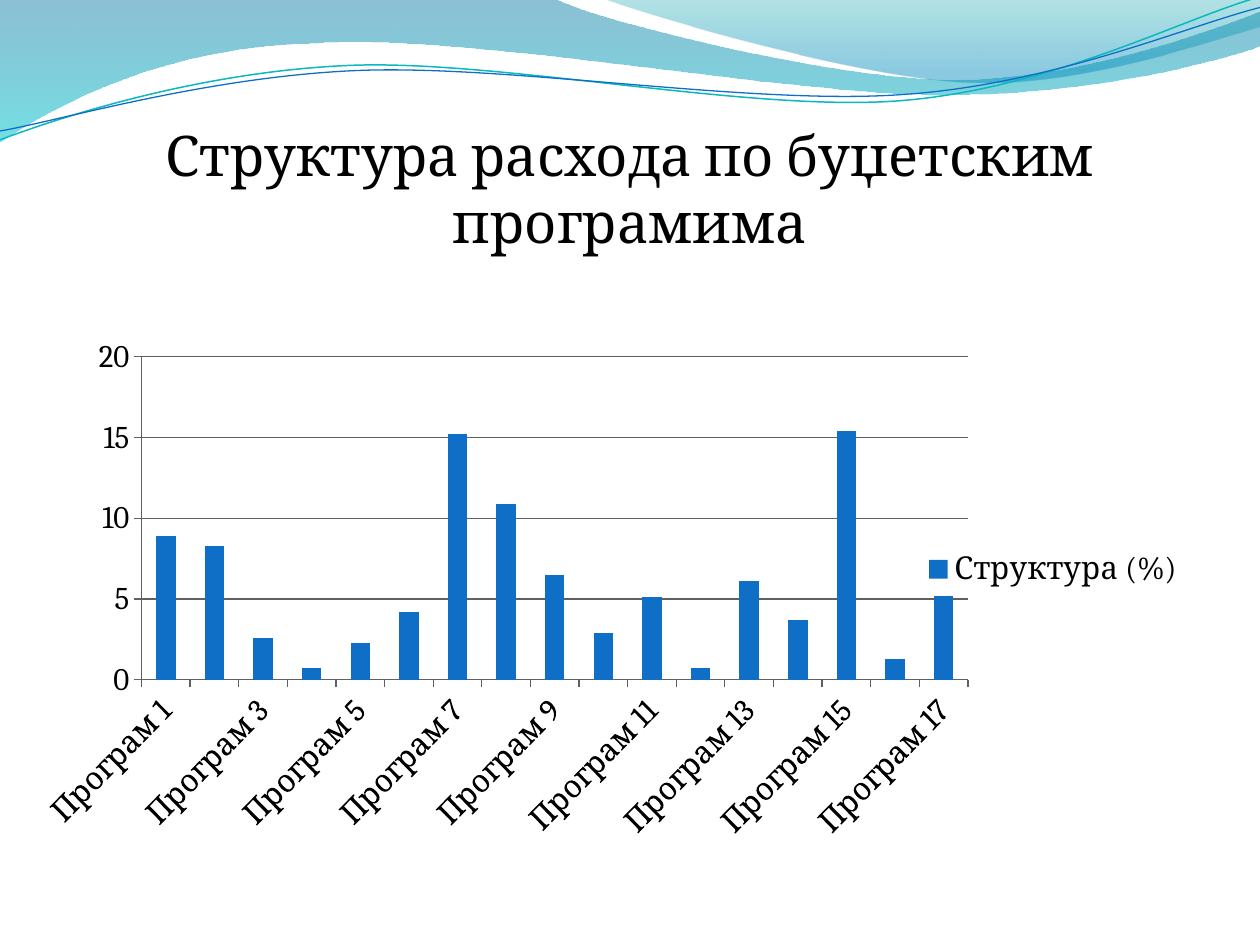
import math
from lxml import etree
from pptx import Presentation
from pptx import util as u
from pptx.chart import data
from pptx.dml.color import RGBColor
from pptx.enum import chart as charts, text
from pptx.oxml import ns, parse_xml

BLACK = RGBColor(0, 0, 0)
BLUE = RGBColor(0x0F, 0x6F, 0xC6)
TEAL = RGBColor(0x0A, 0xB8, 0xBF)
GRAY = RGBColor(0x60, 0x60, 0x60)
DEEP_TEAL = RGBColor(0x00, 0x74, 0xA1)
AQUA = RGBColor(0x00, 0xC6, 0xCF)
SEA = RGBColor(0x00, 0xA1, 0xA9)
SKY = RGBColor(0x00, 0x8B, 0xBF)
FONT = "Cambria"
INCH = u.Cm(2.54)

presentation = Presentation()
presentation.slide_width = u.Cm(25.4)
presentation.slide_height = u.Cm(19.05)
slide = presentation.slides.add_slide(presentation.slide_layouts[6])


def add_wave(start, segments, closed, rotation=0, center=(0, 0)):
    angle = math.radians(-rotation)

    def unrotate(point):
        x, y = point[0] - center[0], point[1] - center[1]
        return (1000 * (center[0] + x * math.cos(angle) - y * math.sin(angle)),
                1000 * (center[1] + x * math.sin(angle) + y * math.cos(angle)))

    builder = slide.shapes.build_freeform(*unrotate(start), scale=INCH / 1000)
    points = [unrotate(point) for segment in segments for point in segment]
    builder.add_line_segments(points, close=closed)
    shape = builder.convert_to_shape()
    shape.rotation = rotation
    shape.shadow.inherit = False
    lines = iter(list(shape._element.iter(ns.qn("a:lnTo"))))
    for segment in segments:
        first = next(lines)
        if len(segment) == 3:
            curve = etree.Element(ns.qn("a:cubicBezTo"))
            first.addprevious(curve)
            for line in (first, next(lines), next(lines)):
                curve.append(line[0])
                line.getparent().remove(line)
    return shape


def fill_gradient(shape, stops):
    shape.line.fill.background()
    shape.fill.background()
    stop_xml = "".join(
        f'<a:gs pos="{position * 1000}"><a:srgbClr val="{color}">'
        f'<a:alpha val="{alpha * 1000}"/></a:srgbClr></a:gs>'
        for position, color, alpha in stops)
    gradient = parse_xml(
        f'<a:gradFill {ns.nsdecls("a")} rotWithShape="1"><a:gsLst>{stop_xml}</a:gsLst>'
        '<a:lin ang="5400000" scaled="0"/></a:gradFill>')
    properties = shape._element.spPr
    properties.replace(properties.find(ns.qn("a:noFill")), gradient)


left_wave = add_wave((0, 0), [
    [(4.4, -0.01)],
    [(4.76, 0.17), (6.64, 0.63), (7.58, 0.63)],
    [(8.53, 0.63), (9.58, 0.26), (10, 0.09)],
    [(10.01, 0.36)],
    [(9.83, 0.44), (8.7, 0.76), (7.46, 0.75)],
    [(6.22, 0.75), (3.82, 0.28), (2.57, 0.34)],
    [(1.29, 0.36), (0.46, 0.83), (-0.01, 1.13)],
], True)
fill_gradient(left_wave, [(0, DEEP_TEAL, 45), (100, AQUA, 55)])

right_wave = add_wave((4.79, -0.01), [
    [(5.09, 0.11), (6.82, 0.62), (7.69, 0.65)],
    [(8.56, 0.69), (9.61, 0.32), (10, 0.21)],
    [(10, 0)],
], True)
fill_gradient(right_wave, [(0, SEA, 30), (80, SKY, 45)])

wave_lines = [
    (TEAL, 0.85, (4.99, 0.58), (0, 1.11), [
        [(0.48, 0.93), (1.58, 0.57), (2.77, 0.52)],
        [(3.95, 0.47), (5.93, 0.89), (7.13, 0.8)],
        [(8.33, 0.71), (9.38, 0.15), (9.98, -0.02)]]),
    (BLUE, 0.75, (5, 0.59), (0, 1.04), [
        [(0.47, 0.96), (1.64, 0.61), (2.83, 0.56)],
        [(4.03, 0.51), (5.97, 0.84), (7.17, 0.75)],
        [(8.36, 0.67), (9.41, 0.21), (10, 0.06)]]),
]
for color, width, center, start, segments in wave_lines:
    wave_line = add_wave(start, segments, False, 357.3, center)
    wave_line.fill.background()
    wave_line.line.color.rgb = color
    wave_line.line.width = u.Pt(width)

title = slide.shapes.add_textbox(u.Cm(1.27), u.Cm(1.96), u.Cm(22.86), u.Cm(3.18))
title_frame = title.text_frame
title_frame.word_wrap = True
title_frame.vertical_anchor = text.MSO_ANCHOR.BOTTOM
title_frame.margin_left = title_frame.margin_right = title_frame.margin_bottom = 0
title_frame.margin_top = u.Cm(0.13)
title_frame.text = "Структура расхода по буџетским програмима"
paragraph = title_frame.paragraphs[0]
paragraph.alignment = text.PP_ALIGN.CENTER
title_font = paragraph.runs[0].font
title_font.name = FONT
title_font.size = u.Pt(32)
title_font.color.rgb = BLACK

shares = [8.9, 8.3, 2.6, 0.7, 2.3, 4.2, 15.2, 10.9, 6.5,
          2.9, 5.1, 0.7, 6.1, 3.7, 15.4, 1.3, 5.2]
chart_data = data.CategoryChartData()
chart_data.categories = [f"Програм {number}" for number in range(1, len(shares) + 1)]
chart_data.add_series("Структура (%)", shares)
chart = slide.shapes.add_chart(
    charts.XL_CHART_TYPE.COLUMN_CLUSTERED,
    u.Cm(0.89), u.Cm(5.38), u.Cm(23.24), u.Cm(12.19), chart_data).chart
chart.has_title = False
chart.font.name = FONT
chart.font.size = u.Pt(18)
chart.font.color.rgb = BLACK
chart.has_legend = True
chart.legend.position = charts.XL_LEGEND_POSITION.RIGHT
chart.legend.include_in_layout = False

plot = chart.plots[0]
plot.vary_by_categories = False
plot.gap_width = 150
columns = plot.series[0]
columns.format.fill.solid()
columns.format.fill.fore_color.rgb = BLUE

value_axis = chart.value_axis
value_axis.minimum_scale = 0
value_axis.maximum_scale = 20
value_axis.major_unit = 5
value_axis.has_major_gridlines = True
for line_owner in (value_axis, chart.category_axis, value_axis.major_gridlines):
    line_owner.format.line.color.rgb = GRAY
    line_owner.format.line.width = u.Pt(0.75)

plot_area = chart._chartSpace.chart.plotArea
for old_layout in plot_area.findall(ns.qn("c:layout")):
    plot_area.remove(old_layout)
placement = "".join(
    f'<c:{name} val="{value}"/>' for name, value in [
        ("layoutTarget", "inner"), ("xMode", "edge"), ("yMode", "edge"),
        ("x", 0.064), ("y", 0.149), ("w", 0.733), ("h", 0.534)])
plot_area.insert(0, parse_xml(
    f'<c:layout {ns.nsdecls("c")}><c:manualLayout>{placement}</c:manualLayout></c:layout>'))

presentation.save("out.pptx")
